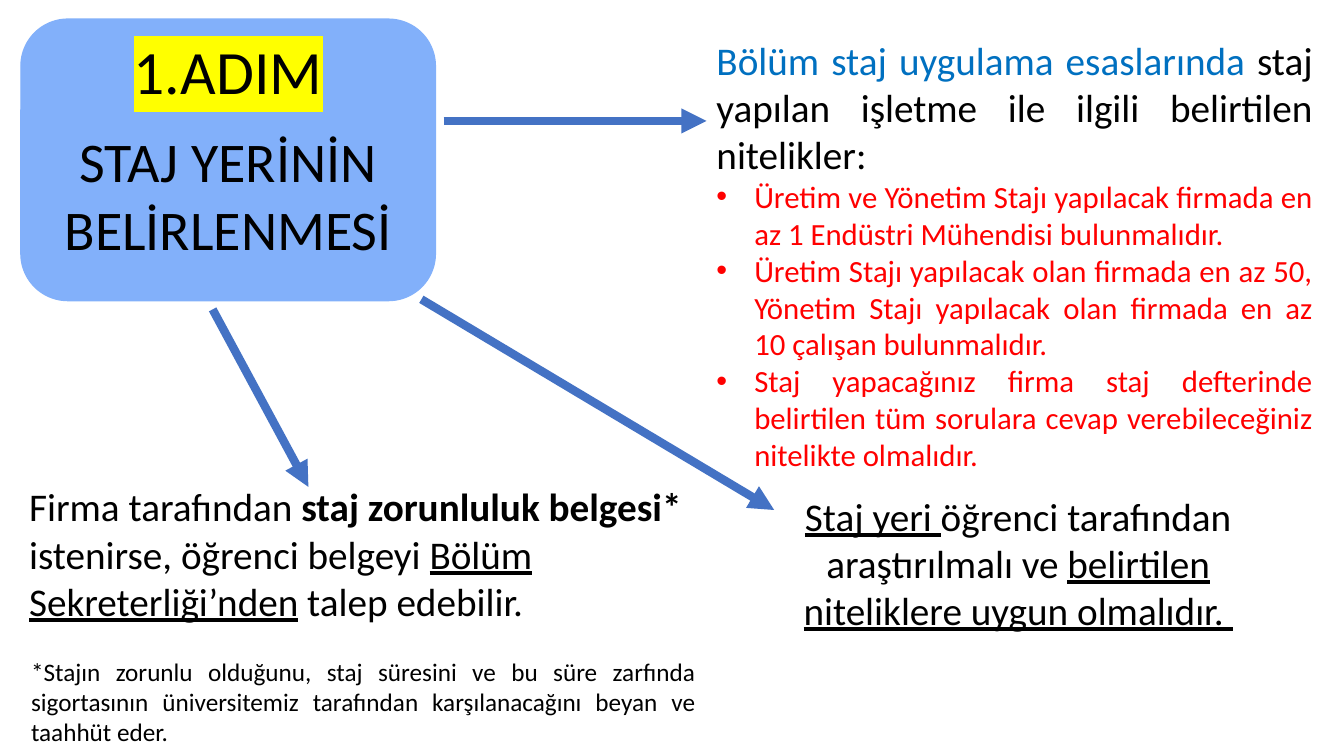
from dataclasses import dataclass

from lxml.etree import SubElement
from pptx import Presentation
from pptx.dml.color import RGBColor
from pptx.enum.shapes import MSO_CONNECTOR as Connector, MSO_SHAPE as Preset
from pptx.enum.text import MSO_ANCHOR as Anchor, MSO_AUTO_SIZE as AutoSize, PP_ALIGN as Align
from pptx.oxml import parse_xml
from pptx.oxml.ns import nsdecls, qn
from pptx.slide import Slide
from pptx.text.text import TextFrame, _Paragraph as Paragraph
from pptx.util import Pt

FONT = "Calibri"
BLACK = RGBColor(0x00, 0x00, 0x00)
RED = RGBColor(0xFF, 0x00, 0x00)
BLUE = RGBColor(0x00, 0x70, 0xC0)
ARROW_BLUE = RGBColor(0x44, 0x72, 0xC4)
BOX_BLUE = RGBColor(0x82, 0xB0, 0xFA)
YELLOW = RGBColor(0xFF, 0xFF, 0x00)
BULLET_INDENT = 27


@dataclass(frozen=True)
class Run:
    text: str
    size: float = 28
    color: RGBColor = BLACK
    bold: bool = False
    underline: bool = False
    highlight: RGBColor | None = None


@dataclass(frozen=True)
class Line:
    runs: tuple[Run, ...]
    align: Align = Align.LEFT
    bullet: bool = False
    spacing: float = 1.0


@dataclass(frozen=True)
class Note:
    left: float
    top: float
    width: float
    height: float
    lines: tuple[Line, ...]


@dataclass(frozen=True)
class Arrow:
    start: tuple[float, float]
    end: tuple[float, float]


TITLE = Line((Run("1.ADIM", 44, highlight=YELLOW),), Align.CENTER, spacing=0.9)
STEP = Line((Run("STAJ YERİNİN BELİRLENMESİ", 40),), Align.CENTER)

REQUIREMENTS = (
    "Üretim ve Yönetim Stajı yapılacak firmada en az 1 Endüstri Mühendisi bulunmalıdır.",
    "Üretim Stajı yapılacak olan firmada en az 50, Yönetim Stajı yapılacak olan firmada "
    "en az 10 çalışan bulunmalıdır.",
    "Staj yapacağınız firma staj defterinde belirtilen tüm sorulara cevap "
    "verebileceğiniz nitelikte olmalıdır. ",
)

NOTES = (
    Note(504.7, 22.3, 440, 322.6, (
        Line((
            Run("Bölüm staj uygulama esaslarında ", color=BLUE),
            Run("staj yapılan işletme ile ilgili belirtilen nitelikler:"),
        ), Align.JUSTIFY),
        *(Line((Run(text, 22, RED),), Align.JUSTIFY, bullet=True) for text in REQUIREMENTS),
    )),
    Note(531.4, 347.8, 391.7, 108.7, (
        Line((
            Run("Staj yeri ", underline=True),
            Run("öğrenci tarafından araştırılmalı ve "),
            Run("belirtilen niteliklere uygun olmalıdır. ", underline=True),
        ), Align.CENTER),
    )),
    Note(13.7, 341.3, 490.3, 108.7, (
        Line((
            Run("Firma tarafından "),
            Run("staj zorunluluk belgesi*", bold=True),
            Run(" istenirse, öğrenci belgeyi "),
            Run("Bölüm Sekreterliği’nden", underline=True),
            Run(" talep edebilir."),
        )),
    )),
    Note(15.1, 465.1, 488.9, 72.7, (
        Line((
            Run("*Stajın zorunlu olduğunu, staj süresini ve bu süre zarfında sigortasının "
                "üniversitemiz tarafından karşılanacağını beyan ve taahhüt eder.", 18),
        ), Align.JUSTIFY),
    )),
)

ARROWS = (
    Arrow((316.8, 86.4), (504.7, 86.4)),
    Arrow((301, 213.8), (553, 364.3)),
    Arrow((151.9, 221), (220.3, 347.8)),
)


def add_run(paragraph: Paragraph, item: Run) -> None:
    run = paragraph.add_run()
    run.text = item.text
    font = run.font
    font.name, font.size = FONT, Pt(item.size)
    font.bold, font.underline = item.bold, item.underline
    font.color.rgb = item.color
    if item.highlight is not None:
        fill = font.fill._xPr.find(qn("a:solidFill"))
        fill.addnext(parse_xml(
            f'<a:highlight {nsdecls("a")}><a:srgbClr val="{item.highlight}"/></a:highlight>'))


def add_bullet(paragraph: Paragraph) -> None:
    properties = paragraph._p.get_or_add_pPr()
    properties.set("marL", str(Pt(BULLET_INDENT)))
    properties.set("indent", str(-Pt(BULLET_INDENT)))
    SubElement(properties, qn("a:buFont"), typeface="Arial")
    SubElement(properties, qn("a:buChar"), char="•")


def write_lines(frame: TextFrame, lines: tuple[Line, ...]) -> None:
    frame.word_wrap = True
    for index, line in enumerate(lines):
        paragraph = frame.add_paragraph() if index else frame.paragraphs[0]
        paragraph.alignment = line.align
        paragraph.line_spacing = line.spacing
        if line.bullet:
            add_bullet(paragraph)
        for item in line.runs:
            add_run(paragraph, item)


def add_step_box(slide: Slide) -> None:
    shape = slide.shapes.add_shape(
        Preset.ROUNDED_RECTANGLE, Pt(15), Pt(13.7), Pt(296), Pt(201))
    shape.shadow.inherit = False
    shape.fill.solid()
    shape.fill.fore_color.rgb = BOX_BLUE
    shape.line.color.rgb = BOX_BLUE
    shape.line.width = Pt(1)
    frame = shape.text_frame
    frame.vertical_anchor = Anchor.MIDDLE
    frame.margin_top = Pt(52.4)  # keeps the step name below the title
    write_lines(frame, (STEP,))


def add_note(slide: Slide, note: Note) -> None:
    shape = slide.shapes.add_textbox(
        Pt(note.left), Pt(note.top), Pt(note.width), Pt(note.height))
    write_lines(shape.text_frame, note.lines)
    shape.text_frame.auto_size = AutoSize.SHAPE_TO_FIT_TEXT


def add_arrow(slide: Slide, arrow: Arrow) -> None:
    connector = slide.shapes.add_connector(
        Connector.STRAIGHT, *map(Pt, arrow.start + arrow.end))
    connector.line.color.rgb = ARROW_BLUE
    connector.line.width = Pt(6)
    SubElement(connector.line._get_or_add_ln(), qn("a:tailEnd"), type="triangle")
    SubElement(connector.element.spPr, qn("a:effectLst"))


def place_title(slide: Slide) -> None:
    """Format the title and bring it in front of the step box."""
    title = slide.shapes.title
    title.left, title.top, title.width, title.height = map(Pt, (73.4, 1.4, 179.3, 104.4))
    title.text_frame.vertical_anchor = Anchor.MIDDLE
    title.text_frame.auto_size = AutoSize.NONE
    write_lines(title.text_frame, (TITLE,))
    title.element.getparent().append(title.element)


def main() -> None:
    presentation = Presentation()
    presentation.slide_width, presentation.slide_height = Pt(960), Pt(540)
    slide = presentation.slides.add_slide(presentation.slide_layouts.get_by_name("Title Only"))
    add_step_box(slide)
    for note in NOTES:
        add_note(slide, note)
    for arrow in ARROWS:
        add_arrow(slide, arrow)
    place_title(slide)
    presentation.save("out.pptx")


if __name__ == "__main__":
    main()
